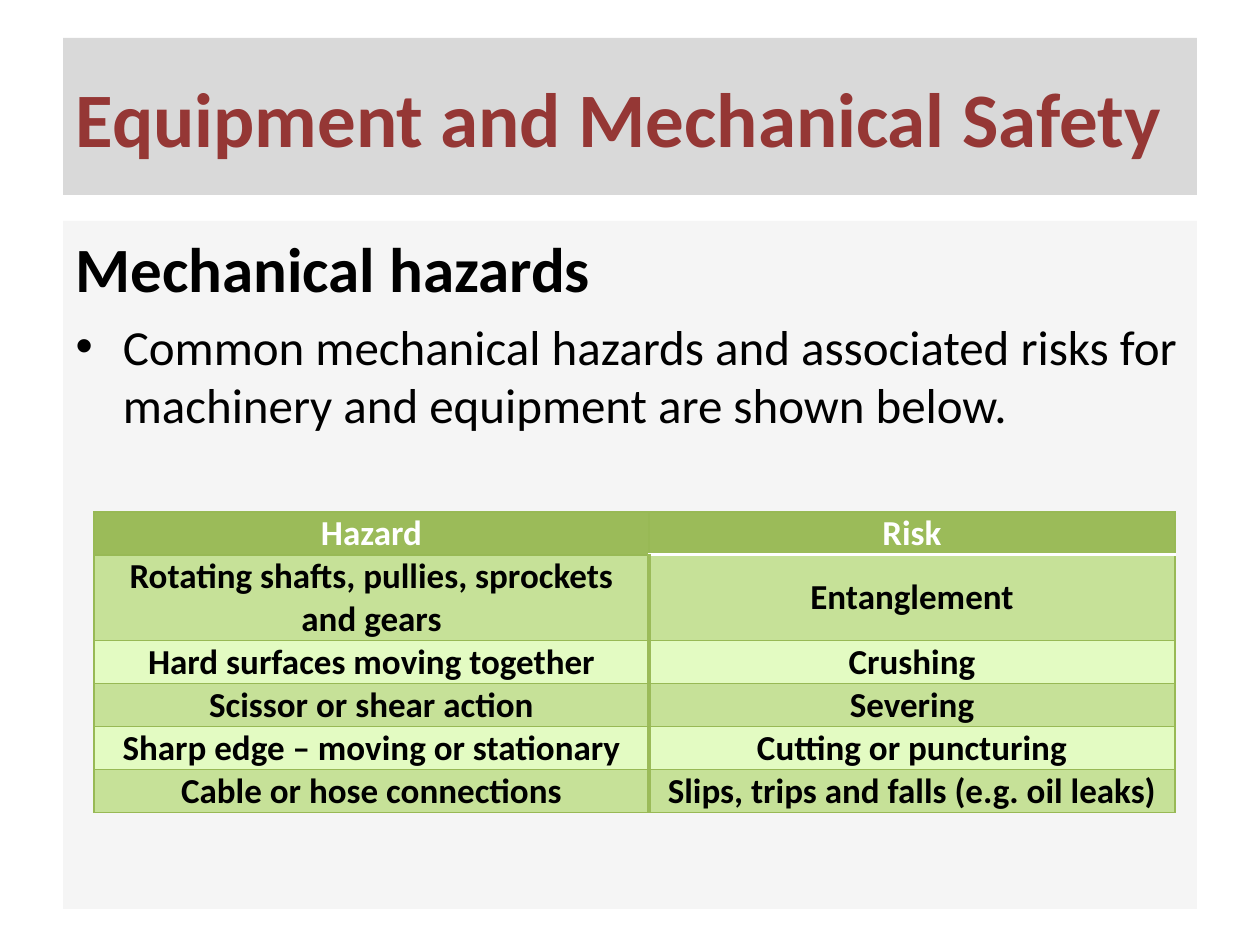
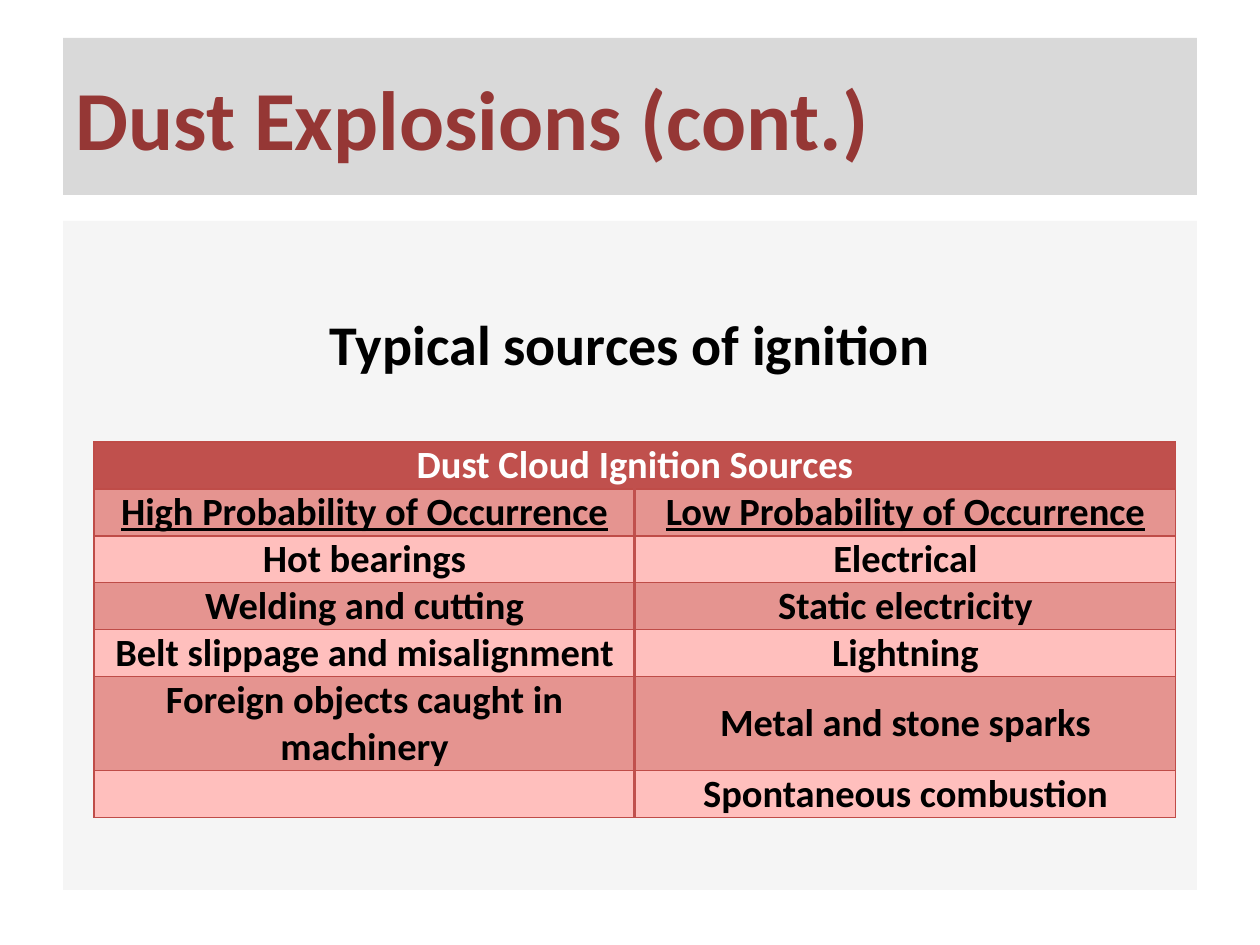
from lxml.etree import SubElement
from pptx import Presentation
from pptx.dml.color import RGBColor
from pptx.enum.text import MSO_ANCHOR, MSO_AUTO_SIZE, PP_ALIGN
from pptx.oxml.ns import qn
from pptx.util import Emu, Pt

FONT = "Calibri"
BLACK = RGBColor(0x00, 0x00, 0x00)
WHITE = RGBColor(0xFF, 0xFF, 0xFF)
TITLE_RED = RGBColor(0x95, 0x37, 0x35)
TITLE_BAND = RGBColor(0xD9, 0xD9, 0xD9)
BODY_PANEL = RGBColor(0xF2, 0xF2, 0xF2)
# Each table palette: header, dark band, light band, thin border
GREEN = (RGBColor(0x9B, 0xBB, 0x59), RGBColor(0xC6, 0xE1, 0x98),
         RGBColor(0xE3, 0xFB, 0xC2), RGBColor(0x98, 0xB9, 0x55))
RED = (RGBColor(0xC0, 0x50, 0x4D), RGBColor(0xE5, 0x94, 0x90),
       RGBColor(0xFF, 0xBF, 0xBD), RGBColor(0xBF, 0x4C, 0x48))

LEFT, WIDTH = 63, 1134
TABLE_LEFT = 94
THIN, THICK = 0.75, 2


def px(length):
    return Emu(round(length * 914400 / 126))


def write(paragraph, text, size, color=BLACK, bold=True, underline=False,
          align=PP_ALIGN.LEFT, space_before=0):
    paragraph.alignment = align
    paragraph.space_before = Pt(space_before)
    run = paragraph.add_run()
    run.text = text
    font = run.font
    font.name, font.size = FONT, Pt(size)
    font.bold, font.underline = bold, underline
    font.color.rgb = color


def remove_bullet(paragraph):
    properties = paragraph._p.get_or_add_pPr()
    properties.set("marL", "0")
    properties.set("indent", "0")
    SubElement(properties, qn("a:buNone"))


def set_border(cell, side, color, width):
    line = SubElement(cell._tc.get_or_add_tcPr(), qn(f"a:ln{side}"), w=str(Pt(width)))
    fill = SubElement(line, qn("a:solidFill"))
    SubElement(fill, qn("a:srgbClr"), val=str(color))


class SafetyDeck:
    def __init__(self):
        self.presentation = Presentation()
        self.presentation.slide_width = px(1260)
        self.presentation.slide_height = px(945)
        self.slide = None

    def add_slide(self, title, title_size):
        layout = self.presentation.slide_layouts[1]
        self.slide = self.presentation.slides.add_slide(layout)
        frame = self.panel(self.slide.shapes.title, 38, 157, TITLE_BAND)
        frame.vertical_anchor = MSO_ANCHOR.MIDDLE
        write(frame.paragraphs[0], title, title_size, TITLE_RED)

    def panel(self, shape, top, height, color):
        """Place a placeholder as a full-width filled band and return its text frame."""
        shape.left, shape.top = px(LEFT), px(top)
        shape.width, shape.height = px(WIDTH), px(height)
        shape.fill.solid()
        shape.fill.fore_color.rgb = color
        frame = shape.text_frame
        frame.word_wrap = True
        frame.auto_size = MSO_AUTO_SIZE.NONE
        return frame

    def body(self, heading, size, height, inset, align=PP_ALIGN.LEFT, bullets=()):
        shape = self.slide.placeholders[1]
        frame = self.panel(shape, 221, height, BODY_PANEL)
        color = shape._element.spPr.find(".//" + qn("a:srgbClr"))
        SubElement(color, qn("a:alpha"), val="75000")
        frame.margin_top = px(inset)
        remove_bullet(frame.paragraphs[0])
        write(frame.paragraphs[0], heading, size, align=align)
        for bullet in bullets:
            write(frame.add_paragraph(), bullet, 28, bold=False, space_before=6)

    def table(self, rows, palette, top, columns, row_height, size,
              tall_row, underlined_row=None, ruled_cell=None):
        """Banded two-column table; ruled_cell gets a white line below it."""
        header, dark, light, border = palette
        heights = [row_height] * len(rows)
        heights[tall_row] = 2 * row_height - 1
        table = self.slide.shapes.add_table(
            len(rows), len(columns), px(TABLE_LEFT), px(top),
            px(sum(columns)), px(sum(heights))).table
        table.first_row = table.horz_banding = False
        for column, width in zip(table.columns, columns):
            column.width = px(width)
        for row, height in zip(table.rows, heights):
            row.height = px(height)
        for row_index, texts in enumerate(rows):
            spans = len(texts) == 1
            if spans:
                table.cell(row_index, 0).merge(table.cell(row_index, len(columns) - 1))
            for column_index in range(len(columns)):
                cell = table.cell(row_index, column_index)
                inner = {0: "R", 1: "L"}[column_index]
                for side in "LRTB":
                    divider = side == inner and row_index > 0
                    set_border(cell, side, header if divider else border,
                               THICK if divider else THIN)
                cell.fill.solid()
                cell.fill.fore_color.rgb = (
                    header if row_index == 0 else dark if row_index % 2 else light)
                cell.vertical_anchor = MSO_ANCHOR.MIDDLE
                cell.margin_left = cell.margin_right = px(9)
                cell.margin_top = cell.margin_bottom = 0
                if column_index < len(texts) and texts[column_index]:
                    write(cell.text_frame.paragraphs[0], texts[column_index], size,
                          color=BLACK if row_index else WHITE,
                          underline=row_index == underlined_row,
                          align=PP_ALIGN.CENTER)
        if ruled_cell:
            row_index, column_index = ruled_cell
            for index, side in ((row_index, "B"), (row_index + 1, "T")):
                properties = table.cell(index, column_index)._tc.tcPr
                line = properties.find(qn(f"a:ln{side}"))
                line.set("w", str(Pt(THICK)))
                line.find(".//" + qn("a:srgbClr")).set("val", str(WHITE))


def main():
    deck = SafetyDeck()

    deck.add_slide("Equipment and Mechanical Safety", 44)
    deck.body("Mechanical hazards", 36, height=688, inset=9, bullets=[
        "Common mechanical hazards and associated risks for machinery and "
        "equipment are shown below."])
    deck.table([
        ("Hazard", "Risk"),
        ("Rotating shafts, pullies, sprockets and gears", "Entanglement"),
        ("Hard surfaces moving together", "Crushing"),
        ("Scissor or shear action", "Severing"),
        ("Sharp edge – moving or stationary", "Cutting or puncturing"),
        ("Cable or hose connections", "Slips, trips and falls (e.g. oil leaks)"),
    ], GREEN, top=512, columns=(555, 526), row_height=43, size=20,
        tall_row=1, ruled_cell=(0, 1))

    deck.add_slide("Dust Explosions (cont.)", 48)
    deck.body("Typical sources of ignition", 32, height=669, inset=88,
              align=PP_ALIGN.CENTER)
    deck.table([
        ("Dust Cloud Ignition Sources",),
        ("High Probability of Occurrence", "Low Probability of Occurrence"),
        ("Hot bearings", "Electrical"),
        ("Welding and cutting", "Static electricity"),
        ("Belt slippage and misalignment", "Lightning"),
        ("Foreign objects caught in machinery", "Metal and stone sparks"),
        ("", "Spontaneous combustion"),
    ], RED, top=442, columns=(541, 541), row_height=47, size=22,
        tall_row=5, underlined_row=1)

    deck.presentation.save("out.pptx")


if __name__ == "__main__":
    main()
